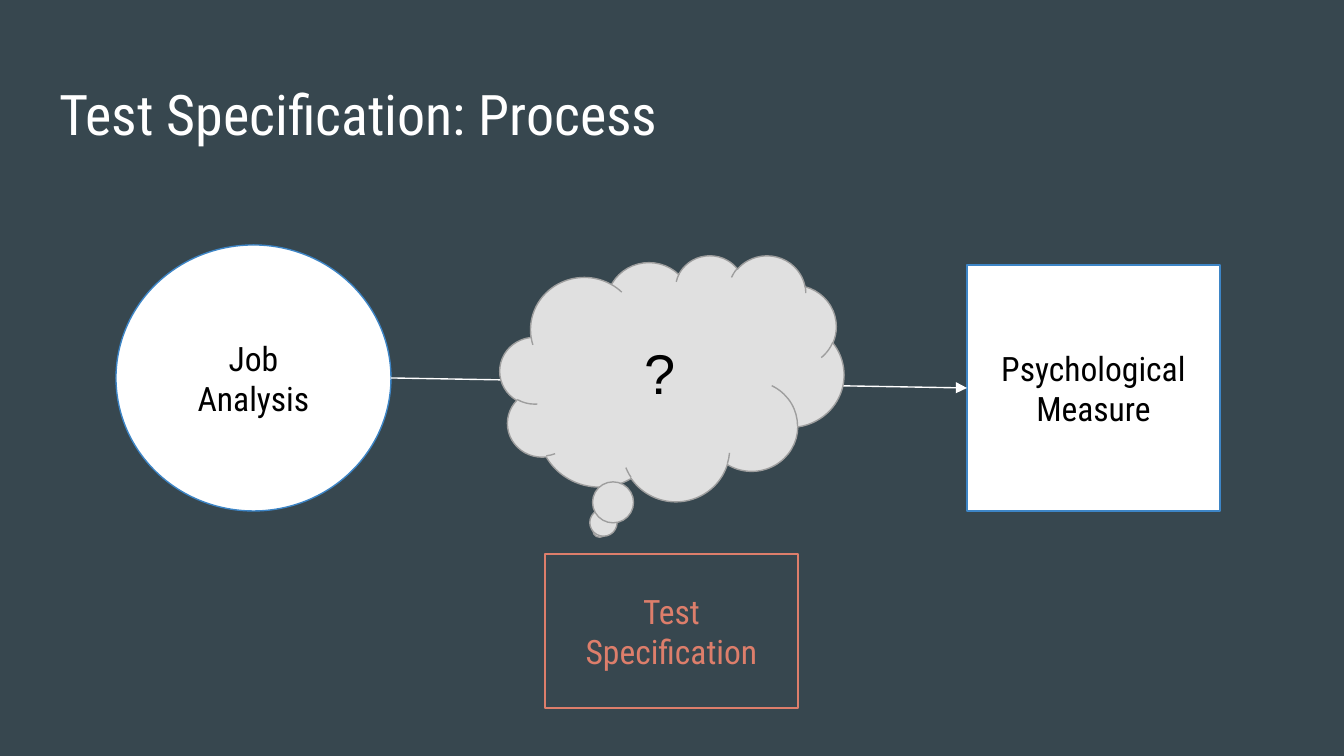
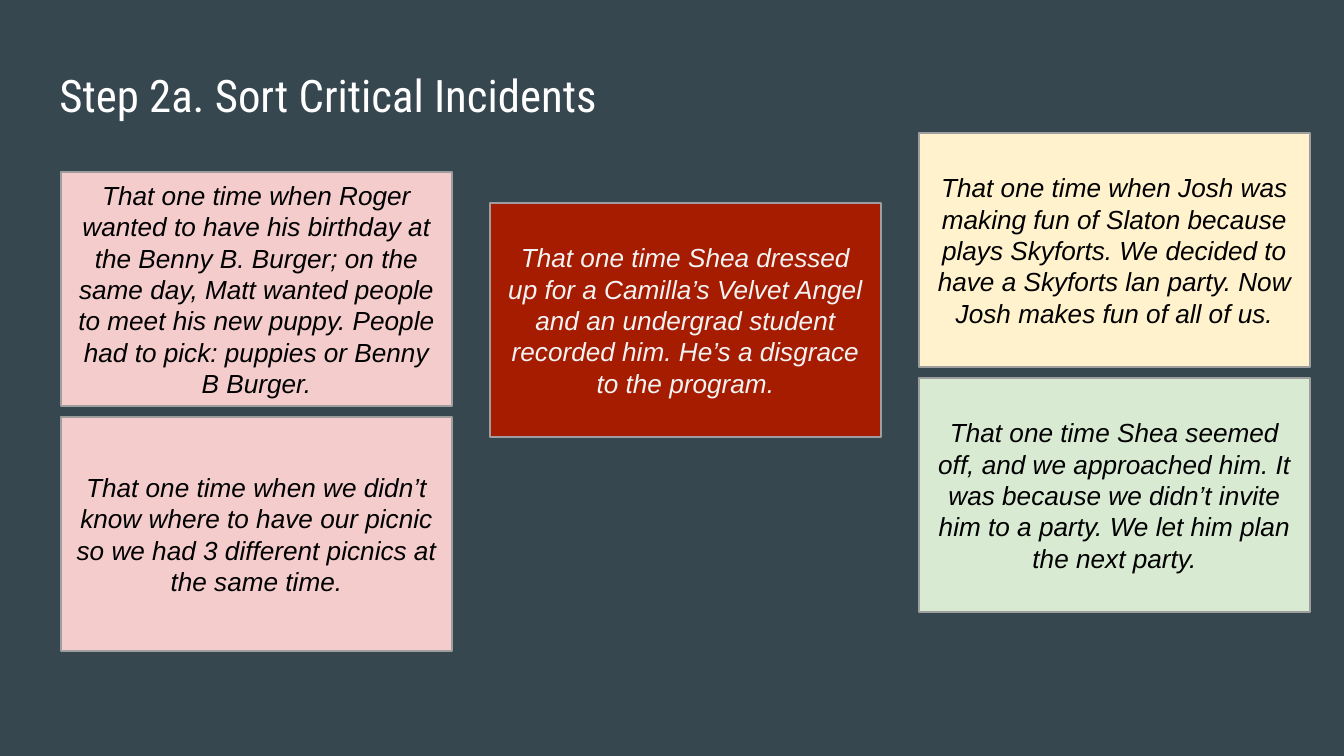
from lxml.etree import SubElement
from pptx import Presentation
from pptx.dml.color import RGBColor
from pptx.enum.shapes import MSO_CONNECTOR, MSO_SHAPE
from pptx.enum.text import MSO_ANCHOR, MSO_AUTO_SIZE, PP_ALIGN
from pptx.oxml.ns import qn
from pptx.util import Emu, Inches, Pt

PIXELS_PER_INCH = 134.4
SLATE = RGBColor(0x37, 0x47, 0x4F)
WHITE = RGBColor(0xFF, 0xFF, 0xFF)
BLACK = RGBColor(0x00, 0x00, 0x00)
BLUE = RGBColor(0x3D, 0x85, 0xC6)
CORAL = RGBColor(0xDD, 0x7E, 0x6B)
CLOUD_GRAY = RGBColor(0xE0, 0xE0, 0xE0)
EDGE_GRAY = RGBColor(0x9E, 0x9E, 0x9E)
PALE_TEXT = RGBColor(0xF3, 0xF3, 0xF3)
GREEN = RGBColor(0xD9, 0xEA, 0xD3)
YELLOW = RGBColor(0xFF, 0xF2, 0xCC)
PINK = RGBColor(0xF4, 0xCC, 0xCC)
RED = RGBColor(0xA6, 0x1C, 0x00)

HEADING_FONT = "Roboto Condensed"
BODY_FONT = "Arial"
LINE_WIDTH = Pt(0.75)
CARD_WIDTH, CARD_HEIGHT = 391, 234
CARD_LEFT, COLUMN_STEP, ROW_STEP = 61, 429, 245


def px(length):
    """Turn pixels into EMU."""
    return Emu(round(length * Inches(1) / PIXELS_PER_INCH))


def write(shape, text, size, color, font=HEADING_FONT, italic=None,
          align=PP_ALIGN.CENTER, anchor=MSO_ANCHOR.MIDDLE):
    """Put formatted text into a shape."""
    frame = shape.text_frame
    frame.text = text
    frame.word_wrap = True
    frame.auto_size = MSO_AUTO_SIZE.NONE
    frame.vertical_anchor = anchor
    frame.margin_left = frame.margin_right = Inches(0.1)
    frame.margin_top = frame.margin_bottom = Inches(0.1)
    para = frame.paragraphs[0]
    para.alignment = align
    span = para.runs[0].font
    span.name, span.size, span.italic = font, Pt(size), italic
    span.color.rgb = color


def add_page(deck, title, top, height, size):
    """Add a title-only page and style its title."""
    page = deck.slides.add_slide(deck.slide_layouts[5])
    box = page.shapes.title
    box.left, box.top = px(46), px(top)
    box.width, box.height = px(1252), px(height)
    write(box, title, size, WHITE, align=PP_ALIGN.LEFT, anchor=MSO_ANCHOR.TOP)
    return page


def add_outlined(shapes, kind, left, top, width, height, fill, line):
    """Add a flat preset shape; a fill of None leaves it empty."""
    shape = shapes.add_shape(kind, px(left), px(top), px(width), px(height))
    shape.shadow.inherit = False
    if fill is None:
        shape.fill.background()
    else:
        shape.fill.solid()
        shape.fill.fore_color.rgb = fill
    shape.line.color.rgb = line
    shape.line.width = LINE_WIDTH
    return shape


def add_arrow(shapes, left, top, target):
    """Draw a white arrow from a point to the left side of the target."""
    arrow = shapes.add_connector(MSO_CONNECTOR.STRAIGHT, px(left), px(top),
                                 target.left, target.top)
    arrow.end_connect(target, 1)
    arrow.line.color.rgb = WHITE
    arrow.line.width = LINE_WIDTH
    SubElement(arrow.line._get_or_add_ln(), qn("a:tailEnd"), type="triangle")
    SubElement(arrow._element.spPr, qn("a:effectLst"))


def add_cards(shapes, column, top, cards):
    """Stack incident cards in one column."""
    left = CARD_LEFT + column * COLUMN_STEP
    for row, (text, fill, color) in enumerate(cards):
        card = add_outlined(shapes, MSO_SHAPE.RECTANGLE, left, top + row * ROW_STEP,
                            CARD_WIDTH, CARD_HEIGHT, fill, EDGE_GRAY)
        write(card, text, 14, color, BODY_FONT, italic=True)


def build_process(deck):
    """Build the page on the path from job analysis to measure."""
    page = add_page(deck, "Test Specification: Process", 66, 85, 30)
    shapes = page.shapes
    analysis = add_outlined(shapes, MSO_SHAPE.OVAL, 116, 245, 275, 266, WHITE, BLUE)
    write(analysis, "Job Analysis", 18, BLACK)
    measure = add_outlined(shapes, MSO_SHAPE.RECTANGLE, 967, 265, 253, 246, WHITE, BLUE)
    write(measure, "Psychological Measure", 18, BLACK)
    add_arrow(shapes, 391, 378, measure)
    cloud = add_outlined(shapes, MSO_SHAPE.CLOUD_CALLOUT, 500, 255, 344, 246,
                         CLOUD_GRAY, EDGE_GRAY)
    cloud.adjustments[0], cloud.adjustments[1] = -0.21, 0.62
    write(cloud, "?", 30, BLACK, BODY_FONT)
    specification = add_outlined(shapes, MSO_SHAPE.RECTANGLE, 545, 554, 253, 154,
                                 None, CORAL)
    write(specification, "Test Specification", 18, CORAL)


def build_incidents(deck):
    """Build the page of sorted critical incidents."""
    page = add_page(deck, "Step 2a. Sort Critical Incidents", 54, 90, 24)
    add_cards(page.shapes.add_group_shape().shapes, 2, 133, [
        ("That one time when Josh was making fun of Slaton because plays Skyforts. "
         "We decided to have a Skyforts lan party. Now Josh makes fun of all of us.",
         YELLOW, BLACK),
        ("That one time Shea seemed off, and we approached him. It was because we "
         "didn’t invite him to a party. We let him plan the next party.",
         GREEN, BLACK),
    ])
    add_cards(page.shapes.add_group_shape().shapes, 0, 172, [
        ("That one time when Roger wanted to have his birthday at the Benny B. Burger; "
         "on the same day, Matt wanted people to meet his new puppy. People had to "
         "pick: puppies or Benny B Burger.", PINK, BLACK),
        ("That one time when we didn’t know where to have our picnic so we had "
         "3 different picnics at the same time.", PINK, BLACK),
    ])
    add_cards(page.shapes, 1, 203, [
        ("That one time Shea dressed up for a Camilla’s Velvet Angel and an undergrad "
         "student recorded him. He’s a disgrace to the program.", RED, PALE_TEXT),
    ])


def main():
    """Build and save the deck."""
    deck = Presentation()
    deck.slide_width, deck.slide_height = px(1344), px(756)
    background = deck.slide_master.background.fill
    background.solid()
    background.fore_color.rgb = SLATE
    build_process(deck)
    build_incidents(deck)
    deck.save("out.pptx")


if __name__ == "__main__":
    main()
